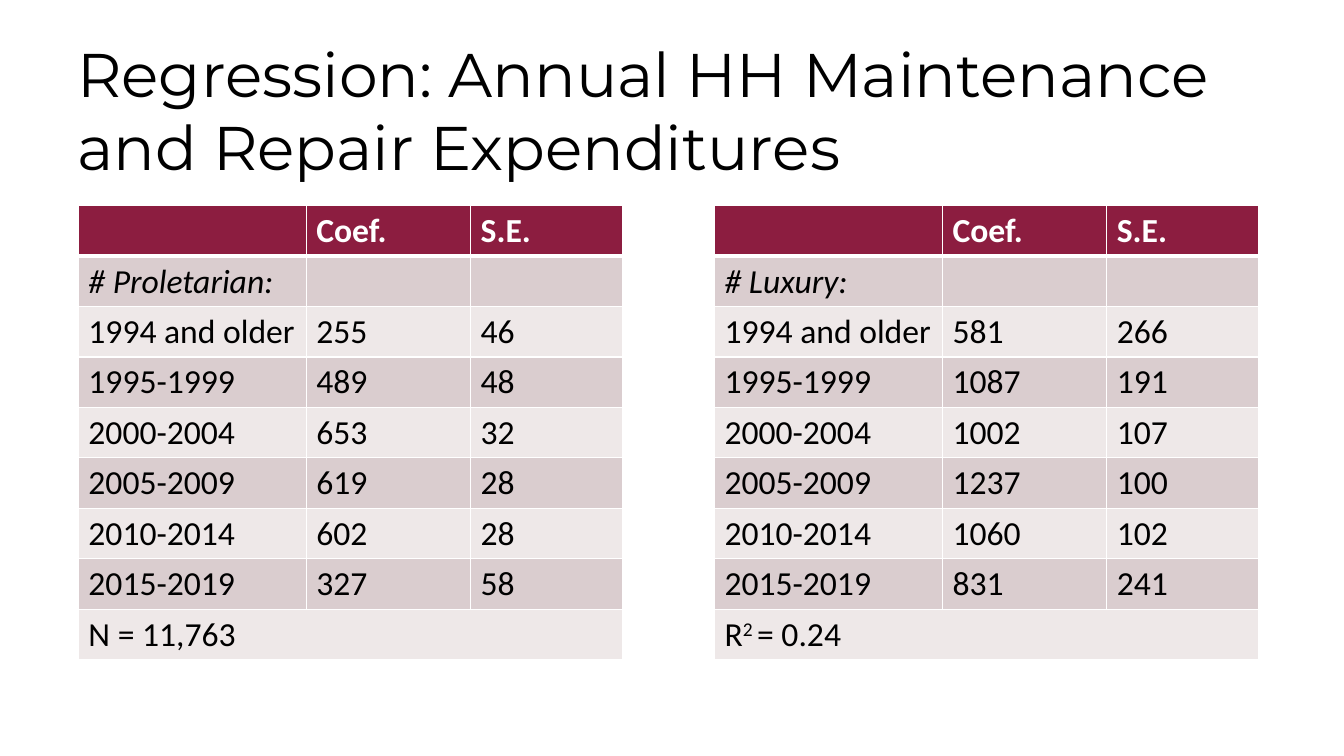
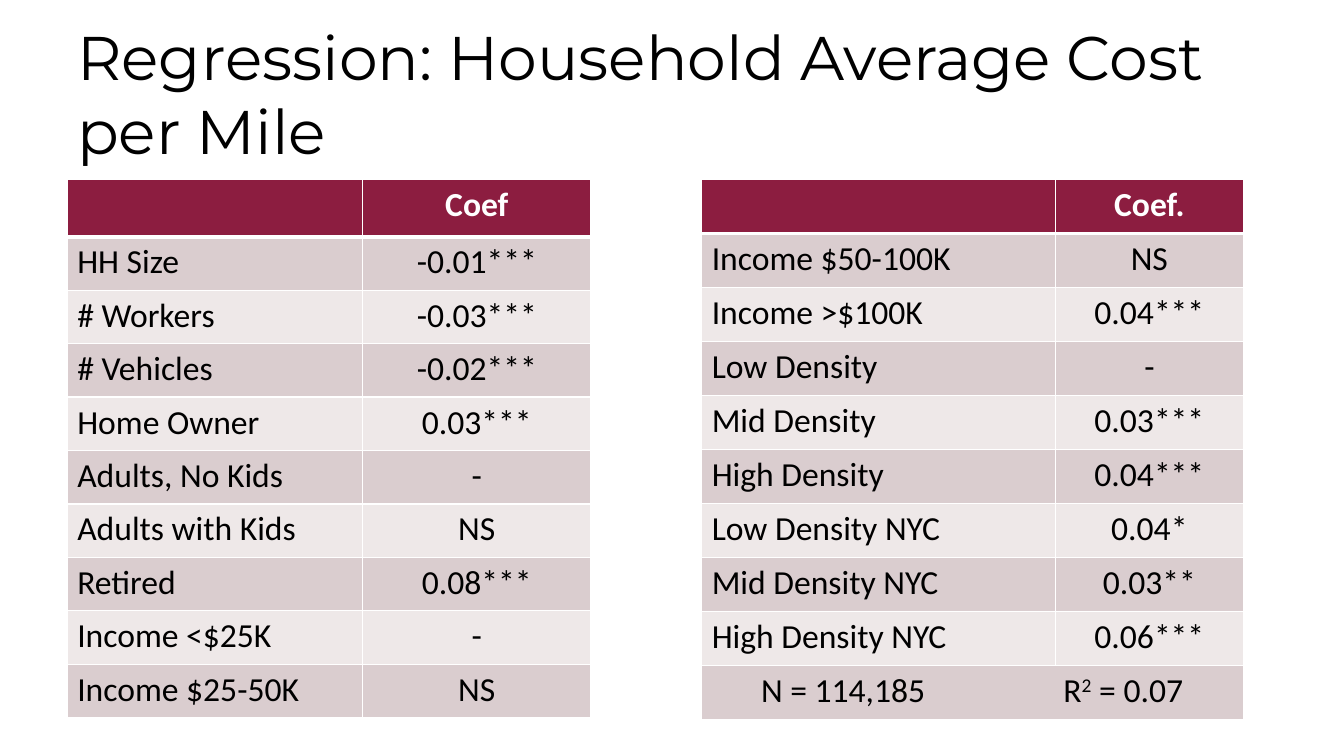
from dataclasses import dataclass

from lxml.etree import SubElement
from pptx import Presentation
from pptx.dml.color import RGBColor as RGB
from pptx.enum.text import MSO_ANCHOR as ANCHOR, PP_ALIGN as ALIGN
from pptx.oxml.ns import qn
from pptx.util import Inches, Pt


@dataclass(frozen=True)
class Theme:
    maroon: RGB = RGB(0x8C, 0x1D, 0x40)
    band_dark: RGB = RGB(0xDA, 0xCD, 0xCF)
    band_light: RGB = RGB(0xEE, 0xE8, 0xE8)
    white: RGB = RGB(0xFF, 0xFF, 0xFF)
    black: RGB = RGB(0, 0, 0)
    title_font: str = "Montserrat"
    body_font: str = "Calibri"
    title_size: int = 44
    body_size: int = 24
    rule: int = 1
    header_rule: int = 3


T = Theme()

prs = Presentation()
prs.slide_width, prs.slide_height = Inches(13.33), Inches(7.5)

# Grid: 120 columns by 75 rows
COL, ROW = prs.slide_width / 120, prs.slide_height / 75


def set_font(p, name, size, color, bold=False, italic=False):
    f = p.font
    f.name, f.size, f.bold, f.italic = name, Pt(size), bold, italic
    f.color.rgb = color


def add_border(cell, side, width):
    ln = SubElement(cell._tc.get_or_add_tcPr(), qn(f"a:ln{side}"), w=str(Pt(width)))
    SubElement(SubElement(ln, qn("a:solidFill")), qn("a:srgbClr"), val=str(T.white))


# Content: carets enclose superscripts, a one-cell row spans the table
YEARS = ["1994 and older", "1995-1999", "2000-2004",
         "2005-2009", "2010-2014", "2015-2019"]
COST_COLS = [20.35, 14.67, 13.6]
proletarian = [("", "Coef.", "S.E."), ("# Proletarian:", "", ""),
               *zip(YEARS, ["255", "489", "653", "619", "602", "327"],
                    ["46", "48", "32", "28", "28", "58"]),
               ("N = 11,763",)]
luxury = [("", "Coef.", "S.E."), ("# Luxury:", "", ""),
          *zip(YEARS, ["581", "1087", "1002", "1237", "1060", "831"],
               ["266", "191", "107", "100", "102", "241"]),
          ("R^2 ^= 0.24",)]
household = [("", "Coef"), ("HH Size", "-0.01***"), ("# Workers", "-0.03***"),
             ("# Vehicles", "-0.02***"), ("Home Owner", "0.03***"),
             ("Adults, No Kids", "-"), ("Adults with Kids", "NS"),
             ("Retired", "0.08***"), ("Income <$25K", "-"),
             ("Income $25-50K", "NS")]
density = [("", "Coef."), ("Income $50-100K", "NS"), ("Income >$100K", "0.04***"),
           ("Low Density", "-"), ("Mid Density", "0.03***"),
           ("High Density", "0.04***"), ("Low Density NYC", "0.04*"),
           ("Mid Density NYC", "0.03**"), ("High Density NYC", "0.06***"),
           ("\tN = 114,185\tR^2^ = 0.07",)]
FOOTER_TABS = [4.4, 31.4]

# Slides: title, title top, table top, value alignment,
# then tables as left, column widths, header height, row height, rows
slides = [
    ("Regression: Annual HH Maintenance and Repair Expenditures", 4.6, 20.4, ALIGN.LEFT,
     [(7, COST_COLS, 4.9, 4.9, proletarian),
      (63.8, COST_COLS, 4.9, 4.9, luxury)]),
    ("Regression: Household Average Cost per Mile", 3, 17.8, ALIGN.CENTER,
     [(6, [26.4, 20.35], 5.7, 5.3, household),
      (62.65, [31.6, 16.75], 5.36, 5.36, density)]),
]

for title, title_top, table_top, value_align, tables in slides:
    s = prs.slides.add_slide(prs.slide_layouts[6])

    # Title
    tf = s.shapes.add_textbox(int(6 * COL), int(title_top * ROW),
                              int(108 * COL), int(12.5 * ROW)).text_frame
    tf.word_wrap, tf.vertical_anchor = True, ANCHOR.MIDDLE
    p = tf.paragraphs[0]
    p.add_run().text = title
    set_font(p, T.title_font, T.title_size, T.black)

    # Tables
    for left, widths, header_height, row_height, rows in tables:
        heights = [header_height] + [row_height] * (len(rows) - 1)
        tbl = s.shapes.add_table(len(rows), len(widths), int(left * COL), int(table_top * ROW),
                                 int(sum(widths) * COL), int(sum(heights) * ROW)).table
        tbl.horz_banding = False
        for column, width in zip(tbl.columns, widths):
            column.width = int(width * COL)

        for i, (values, height) in enumerate(zip(rows, heights)):
            tbl.rows[i].height = int(height * ROW)
            header = i == 0
            fill = T.maroon if header else T.band_dark if i % 2 else T.band_light

            # Borders and fills
            for j in range(len(widths)):
                cell = tbl.cell(i, j)
                for side in "LRTB":
                    heavy = (side, i) in (("B", 0), ("T", 1))
                    add_border(cell, side, T.header_rule if heavy else T.rule)
                cell.fill.solid()
                cell.fill.fore_color.rgb = fill
            if len(values) == 1:
                tbl.cell(i, 0).merge(tbl.cell(i, len(widths) - 1))

            # Text
            for j, text in enumerate(values):
                if not text:
                    continue
                p = tbl.cell(i, j).text_frame.paragraphs[0]
                p.alignment = value_align if j else ALIGN.LEFT
                if "\t" in text:
                    tabs = SubElement(p._p.get_or_add_pPr(), qn("a:tabLst"))
                    for stop in FOOTER_TABS:
                        SubElement(tabs, qn("a:tab"), pos=str(int(stop * COL)), algn="l")
                set_font(p, T.body_font, T.body_size, T.white if header else T.black,
                         bold=header, italic=text.endswith(":"))
                for k, part in enumerate(text.split("^")):
                    r = p.add_run()
                    r.text = part
                    if k % 2:
                        r._r.get_or_add_rPr().set("baseline", "30000")

prs.save("out.pptx")
